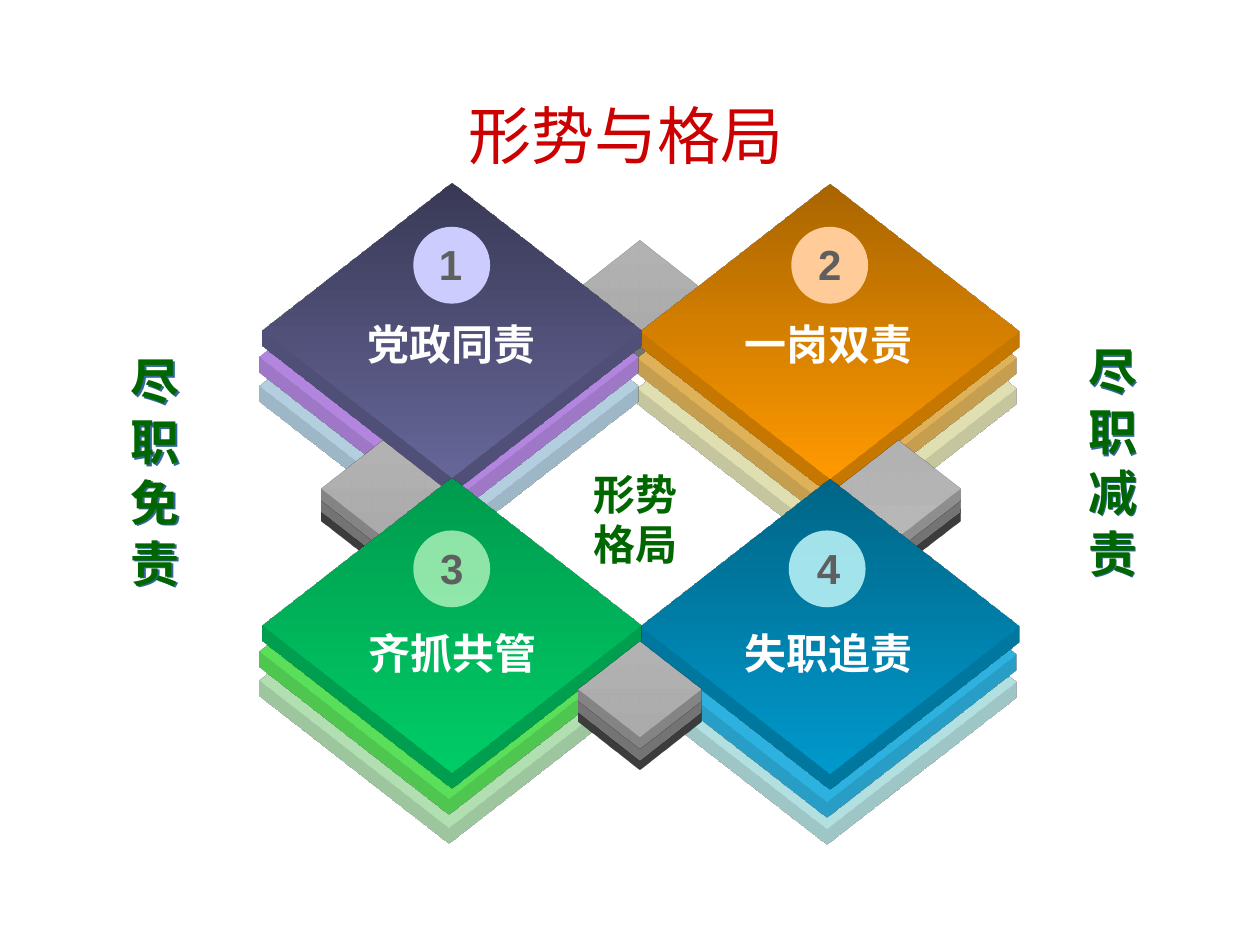
"""Build the slide of four stacked diamond tiles around a central theme."""
from lxml import etree
from pptx import Presentation
from pptx.dml.color import RGBColor
from pptx.enum.shapes import MSO_SHAPE as SHAPE
from pptx.enum.text import MSO_ANCHOR as ANCHOR, MSO_AUTO_SIZE as AUTO, PP_ALIGN as ALIGN
from pptx.oxml import parse_xml
from pptx.oxml.ns import nsdecls, qn
from pptx.util import Inches, Pt

prs = Presentation()
prs.slide_width, prs.slide_height = Inches(10), Inches(7.5)
slide = prs.slides.add_slide(prs.slide_layouts[5])


def paint(target, color):
    """Fill a shape or font with a hex colour."""
    target.fill.solid()
    target.fill.fore_color.rgb = RGBColor.from_string(color)


def write(frame, lines, size, color, font="Arial", bold=True, align=ALIGN.CENTER):
    """Put formatted lines into a text frame."""
    frame.text = "\n".join(lines)
    style = {"size": Pt(size), "name": font, "bold": bold}
    for paragraph in frame.paragraphs:
        paragraph.alignment = align
        for run in paragraph.runs:
            for key, value in style.items():
                setattr(run.font, key, value)
            paint(run.font, color)


LARGE = {"width": 3.01, "height": 2.34, "depth": 0.25}
SMALL = {"width": 0.98, "height": 0.76, "depth": 0.19}
GREYS = ["4D4D4D", "969696", "B2B2B2", "ABABAB"]

link_top = (SMALL, [(4.59, 2.07), (4.59, 1.99), (4.59, 1.91)], GREYS)
link_right = (SMALL, [(6.64, 3.66), (6.64, 3.59), (6.64, 3.5)], GREYS[:3] + ["B7B7B7"])
link_left = (SMALL, [(2.55, 3.66), (2.55, 3.59), (2.55, 3.5)], GREYS)
link_bottom = (SMALL, [(4.59, 5.25), (4.59, 5.18), (4.59, 5.09)], GREYS)
orange = (LARGE, [(5.06, 1.91), (5.06, 1.67), (5.08, 1.46)],
          ["FFFFCC", "FFCC66", "A96500", "FF9900"])
purple = (LARGE, [(2.06, 1.89), (2.06, 1.66), (2.08, 1.45)],
          ["CCECFF", "CC99FF", "393956", "666699"])
blue = (LARGE, [(5.06, 4.24), (5.06, 4.02), (5.08, 3.8)],
        ["CCFFFF", "33CCFF", "006587", "0099CC"])
green = (LARGE, [(2.06, 4.23), (2.06, 4), (2.08, 3.79)],
         ["CCFFCC", "66FF66", "009B4E", "00CC66"])

for tile, corners, colors in [link_top, orange, purple, link_right, blue,
                              link_left, green, link_bottom]:
    stack = slide.shapes.add_group_shape().shapes
    width, height, depth = tile.values()
    for level, (left, top) in enumerate(corners):
        layer = stack.add_shape(SHAPE.DIAMOND, Inches(left), Inches(top),
                                Inches(width), Inches(height))
        side_color = colors[level]
        if level == 2:
            side_color = colors[-1]
            layer.fill.gradient()
            layer.fill.gradient_angle = 270
            for stop, color in zip(layer.fill.gradient_stops, colors[2:]):
                stop.color.rgb = RGBColor.from_string(color)
        else:
            paint(layer, side_color)
        layer.line.fill.background()
        layer.shadow.inherit = False
        properties = layer._element.spPr
        properties.append(parse_xml(
            f'<a:scene3d {nsdecls("a")}><a:camera prst="legacyObliqueBottom"/>'
            '<a:lightRig rig="legacyFlat3" dir="r"/></a:scene3d>'))
        properties.append(parse_xml(
            f'<a:sp3d {nsdecls("a")} extrusionH="{Inches(depth)}" prstMaterial="legacyMatte">'
            '<a:bevelT w="13500" h="13500" prst="angle"/>'
            '<a:bevelB w="13500" h="13500" prst="angle"/>'
            f'<a:extrusionClr><a:srgbClr val="{side_color}"/></a:extrusionClr></a:sp3d>'))

title = slide.shapes.title
title.left, title.top = Inches(0.43), Inches(0.91)
title.width, title.height = Inches(9.07), Inches(0.39)
write(title.text_frame, ["形势与格局"], 36, "CC0000", "Montserrat", False)
title_format = {"vertical_anchor": ANCHOR.MIDDLE, "auto_size": AUTO.NONE, "word_wrap": True}
for key, value in title_format.items():
    setattr(title.text_frame, key, value)
title.text_frame.paragraphs[0].line_spacing = 0.9

badges = [(3.28, 1.8, "CCCCFF", 100), (6.28, 1.8, "FFCC99", 100),
          (3.28, 4.21, "CCFFCC", 70), (6.26, 4.21, "CCFFFF", 80)]
for left, top, color, opacity in badges:
    badge = slide.shapes.add_shape(SHAPE.OVAL, Inches(left), Inches(top),
                                   Inches(0.61), Inches(0.61))
    paint(badge, color)
    badge.line.fill.background()
    badge.shadow.inherit = False
    if opacity < 100:
        rgb = badge._element.spPr.find(qn("a:solidFill"))[0]
        etree.SubElement(rgb, qn("a:alpha")).set("val", str(opacity * 1000))

labels = [
    (2.82, 2.48, 1.53, 0.5, ["党政同责"], "FEFEFE"),
    (5.81, 2.48, 1.53, 0.5, ["一岗双责"], "FEFEFE"),
    (2.83, 4.93, 1.53, 0.5, ["齐抓共管"], "FEFEFE"),
    (5.81, 4.93, 1.53, 0.5, ["失职追责"], "FEFEFE"),
    (3.38, 1.84, 0.39, 0.5, ["1"], "5F5F5F"),
    (6.39, 1.84, 0.39, 0.5, ["2"], "5F5F5F"),
    (3.39, 4.26, 0.39, 0.5, ["3"], "5F5F5F"),
    (6.38, 4.26, 0.39, 0.5, ["4"], "5F5F5F"),
    (4.61, 3.67, 0.87, 0.9, ["形势", "格局"], "006600"),
]
for left, top, width, height, lines, color in labels:
    label = slide.shapes.add_textbox(Inches(left), Inches(top), Inches(width), Inches(height))
    label.text_frame.word_wrap = False
    label.text_frame.auto_size = AUTO.SHAPE_TO_FIT_TEXT
    write(label.text_frame, lines, 24, color)

for left, top, motto in [(8.43, 2.65, "尽 职 减 责"), (0.83, 2.73, "尽 职 免 责")]:
    column = slide.shapes.add_textbox(Inches(left), Inches(top), Inches(0.67), Inches(2.36))
    column.text_frame.word_wrap = True
    column.text_frame.auto_size = AUTO.SHAPE_TO_FIT_TEXT
    column.text_frame._txBody.bodyPr.set("vert", "eaVert")
    write(column.text_frame, [motto], 28, "006600", align=ALIGN.LEFT)
    column._element.spPr.append(parse_xml(
        f'<a:effectLst {nsdecls("a")}><a:outerShdw dist="17961" dir="2700000">'
        '<a:srgbClr val="336699"/></a:outerShdw></a:effectLst>'))

prs.save("out.pptx")
